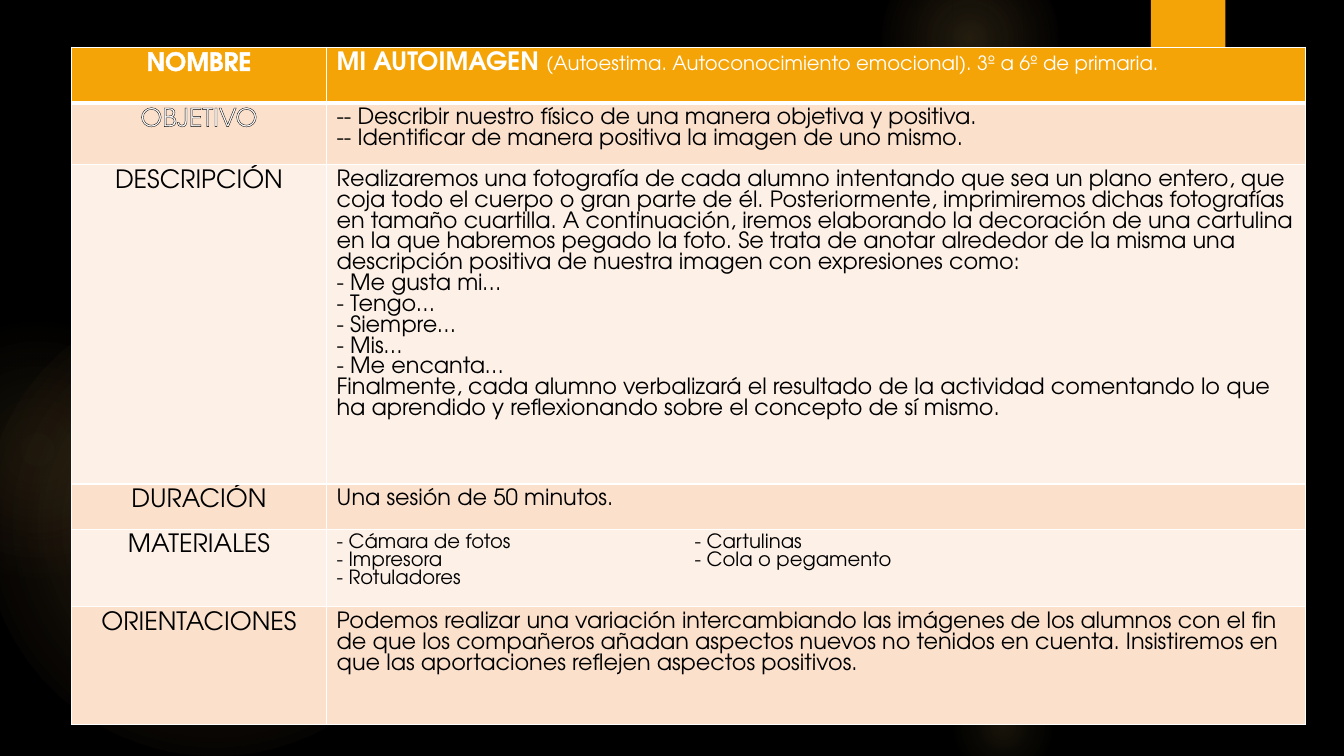
from dataclasses import dataclass

from lxml import etree
from pptx import Presentation
from pptx.dml.color import RGBColor
from pptx.enum import shapes, text
from pptx.oxml import ns
from pptx.util import Emu, Pt

PX = 9525  # EMU per px, 96 px to the inch


@dataclass(frozen=True)
class Theme:
    font: str = "TeX Gyre Adventor"
    background: str = "000000"
    accent: str = "F5A408"
    glow: str = "FAC96A"
    glow_edge: str = "F59B74"
    light: str = "FFFFFF"
    dark: str = "000000"
    bands: tuple[str, str] = ("FDF0E7", "FBE0CC")
    label_size: int = 18
    body_size: int = 16
    small_size: int = 14


THEME = Theme()


@dataclass(frozen=True)
class Glow:
    left: int
    top: int
    size: int
    stops: tuple[tuple[int, int], ...]  # position and opacity, in percent
    edge: str = THEME.glow


@dataclass(frozen=True)
class Run:
    words: str
    size: int = THEME.body_size
    color: str = THEME.dark
    bold: bool = False
    outline: str = ""


@dataclass(frozen=True)
class Section:
    height: int
    label: Run
    paragraphs: list[list[Run]]


def label(words: str, color: str = THEME.dark) -> Run:
    return Run(words, THEME.label_size, color, outline=THEME.dark)


def lines(*wording: str, size: int = THEME.body_size) -> list[list[Run]]:
    return [[Run(words, size)] for words in wording]


GLOWS = [
    Glow(-16, 280, 440, ((0, 11), (36, 10), (75, 0))),
    Glow(-88, 304, 248, ((0, 8), (36, 5), (71, 0)), THEME.glow_edge),
    Glow(903, 176, 296, ((0, 7), (36, 6), (69, 0))),
    Glow(840, -48, 168, ((0, 14), (36, 7), (73, 0))),
    Glow(903, 640, 104, ((0, 10), (31, 5), (66, 0))),
]
TABLE_LEFT, TABLE_TOP = 68, 45
COLUMN_WIDTHS = (243, 932)
MATERIALS_TAB = 341

SECTIONS = [
    Section(53, Run("NOMBRE", THEME.label_size, THEME.light, True, THEME.light), [[
        Run("MI AUTOIMAGEN ", THEME.label_size, THEME.light, True),
        Run("(Autoestima. Autoconocimiento emocional). 3º a 6º de primaria.",
            THEME.small_size, THEME.light),
    ]]),
    Section(59, label("OBJETIVO", THEME.light), lines(
        "-- Describir nuestro físico de una manera objetiva y positiva.",
        "-- Identificar de manera positiva la imagen de uno mismo.")),
    Section(304, label("DESCRIPCIÓN"), lines(
        "Realizaremos una fotografía de cada alumno intentando que sea un plano entero, "
        "que coja todo el cuerpo o gran parte de él. Posteriormente, imprimiremos dichas "
        "fotografías en tamaño cuartilla. A continuación, iremos elaborando la decoración "
        "de una cartulina en la que habremos pegado la foto. Se trata de anotar alrededor "
        "de la misma una descripción positiva de nuestra imagen con expresiones como:",
        "- Me gusta mi…", "- Tengo…", "- Siempre…", "- Mis…", "- Me encanta…",
        "Finalmente, cada alumno verbalizará el resultado de la actividad comentando lo "
        "que ha aprendido y reflexionando sobre el concepto de sí mismo.")),
    Section(43, label("DURACIÓN"), lines("Una sesión de 50 minutos.")),
    Section(74, label("MATERIALES"), lines(
        "- Cámara de fotos\t- Cartulinas", "- Impresora\t- Cola o pegamento",
        "- Rotuladores", size=THEME.small_size)),
    Section(112, label("ORIENTACIONES"), lines(
        "Podemos realizar una variación intercambiando las imágenes de los alumnos con el "
        "fin de que los compañeros añadan aspectos nuevos no tenidos en cuenta. "
        "Insistiremos en que las aportaciones reflejen aspectos positivos.")),
]


def px(length: int) -> Emu:
    return Emu(length * PX)


def add_node(parent, tag: str, **attributes):
    return etree.SubElement(parent, ns.qn(tag),
                            {name: str(value) for name, value in attributes.items()})


def solid_line(parent, tag: str, color: str, width: float) -> etree._Element:
    line = add_node(parent, tag, w=Pt(width))
    add_node(add_node(line, "a:solidFill"), "a:srgbClr", val=color)
    return line


def add_plain_shape(slide, kind, left: int, top: int, width: int, height: int):
    shape = slide.shapes.add_shape(kind, px(left), px(top), px(width), px(height))
    shape.shadow.inherit = False
    shape.line.fill.background()
    return shape


def draw_glow(slide, glow: Glow) -> None:
    """A circle whose radial gradient fades out towards its edge."""
    circle = add_plain_shape(slide, shapes.MSO_SHAPE.OVAL,
                             glow.left, glow.top, glow.size, glow.size)
    gradient = etree.Element(ns.qn("a:gradFill"))
    stops = add_node(gradient, "a:gsLst")
    for position, opacity in glow.stops:
        stop = add_node(stops, "a:gs", pos=position * 1000)
        color = add_node(stop, "a:srgbClr", val=THEME.glow if opacity else glow.edge)
        add_node(color, "a:alpha", val=opacity * 1000)
    add_node(add_node(gradient, "a:path", path="circle"),
             "a:fillToRect", l=50000, t=50000, r=50000, b=50000)
    circle.element.spPr.find(ns.qn("a:prstGeom")).addnext(gradient)


def write_run(paragraph, content: Run) -> None:
    run = paragraph.add_run()
    run.text = content.words
    run.font.name = THEME.font
    run.font.size = Pt(content.size)
    run.font.bold = content.bold
    run.font.color.rgb = RGBColor.from_string(content.color)
    if content.outline:
        properties = run.font._element
        properties.insert(0, solid_line(properties, "a:ln", content.outline, 0.75))


def fill_cell(cell, paragraphs: list[list[Run]], fill: str, bottom: int, centred: bool) -> None:
    for index, runs in enumerate(paragraphs):
        frame = cell.text_frame
        paragraph = frame.add_paragraph() if index else frame.paragraphs[0]
        if centred:
            paragraph.alignment = text.PP_ALIGN.CENTER
        if any("\t" in run.words for run in runs):
            tabs = add_node(paragraph._p.get_or_add_pPr(), "a:tabLst")
            add_node(tabs, "a:tab", pos=px(MATERIALS_TAB), algn="l")
        for run in runs:
            write_run(paragraph, run)
    properties = cell._tc.get_or_add_tcPr()
    for side, width in (("L", 1), ("R", 1), ("T", 1), ("B", bottom)):
        solid_line(properties, f"a:ln{side}", THEME.light, width)
    cell.fill.solid()
    cell.fill.fore_color.rgb = RGBColor.from_string(fill)


def draw_activity(slide) -> None:
    heights = [section.height for section in SECTIONS]
    table = slide.shapes.add_table(len(SECTIONS), 2, px(TABLE_LEFT), px(TABLE_TOP),
                                   px(sum(COLUMN_WIDTHS)), px(sum(heights))).table
    for column, width in zip(table.columns, COLUMN_WIDTHS):
        column.width = px(width)
    for index, section in enumerate(SECTIONS):
        table.rows[index].height = px(section.height)
        fill = THEME.bands[index % 2] if index else THEME.accent
        bottom = 1 if index else 3
        fill_cell(table.cell(index, 0), [[section.label]], fill, bottom, True)
        fill_cell(table.cell(index, 1), section.paragraphs, fill, bottom, False)


def main() -> None:
    deck = Presentation()
    deck.slide_width, deck.slide_height = px(1280), px(720)
    slide = deck.slides.add_slide(deck.slide_layouts[6])
    slide.background.fill.solid()
    slide.background.fill.fore_color.rgb = RGBColor.from_string(THEME.background)
    for glow in GLOWS:
        draw_glow(slide, glow)
    tab = add_plain_shape(slide, shapes.MSO_SHAPE.RECTANGLE, 1096, 0, 71, 120)
    tab.fill.solid()
    tab.fill.fore_color.rgb = RGBColor.from_string(THEME.accent)
    draw_activity(slide)
    deck.save("out.pptx")


if __name__ == "__main__":
    main()
